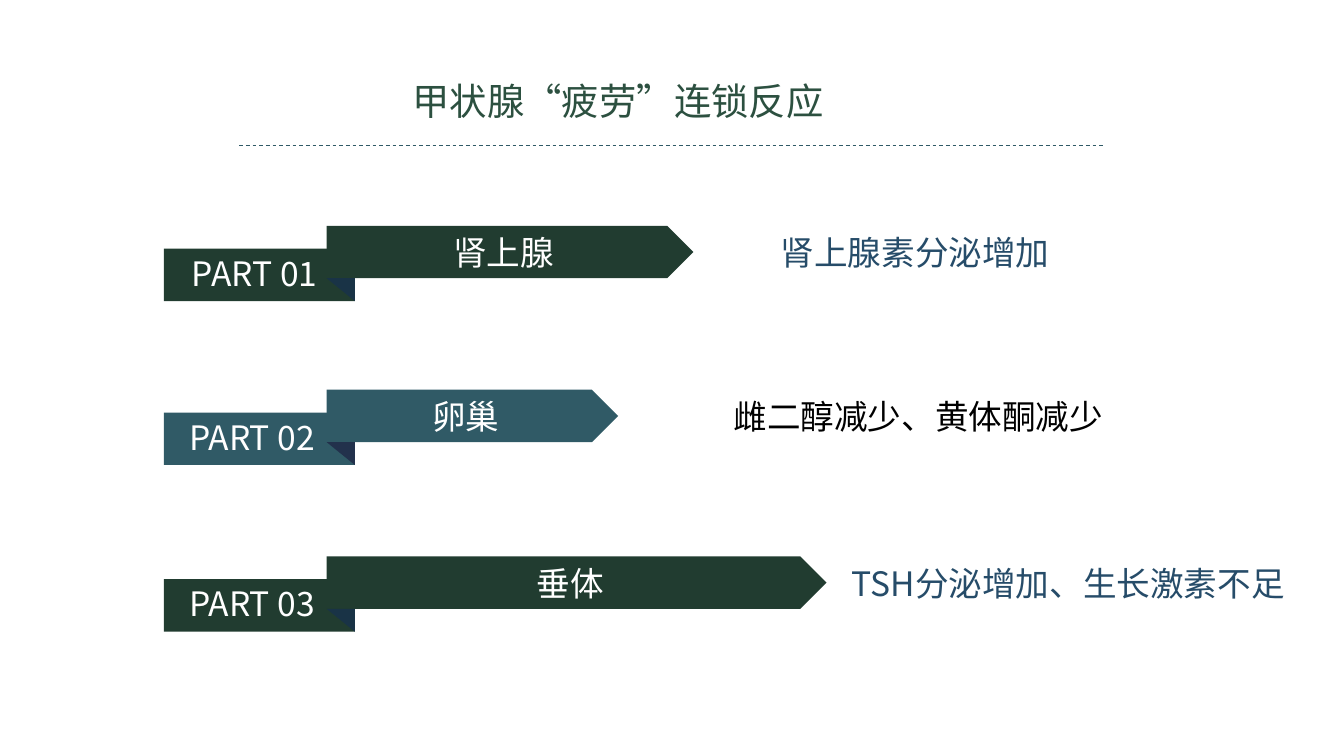
import pptx
import pptx.util
import pptx.dml.color
import pptx.enum.dml
import pptx.enum.shapes
import pptx.enum.text
import pptx.oxml.ns
from dataclasses import dataclass
from lxml import etree

Inches = pptx.util.Inches
SHAPE = pptx.enum.shapes.MSO_SHAPE
ALIGN = pptx.enum.text.PP_ALIGN
qn = pptx.oxml.ns.qn


@dataclass(frozen=True)
class Theme:
    font: str = "Noto Sans CJK SC"
    head: int = 20
    body: int = 18
    title: str = "2C5040"
    green: str = "213C30"
    teal: str = "305A66"
    navy: str = "193346"
    dusk: str = "22314C"
    blue: str = "264C69"
    black: str = "000000"
    white: str = "FFFFFF"


THEME = Theme()


def rgb(code):
    return pptx.dml.color.RGBColor.from_string(code)


def write(frame, text, size, color, align=ALIGN.LEFT):
    para = frame.paragraphs[0]
    para.text = text
    para.alignment = align
    font = para.font
    font.size = pptx.util.Pt(size)
    font.color.rgb = rgb(color)
    font.name = THEME.font
    # East Asian face for the Chinese glyphs
    props = para._p.get_or_add_pPr().find(qn("a:defRPr"))
    etree.SubElement(props, qn("a:ea")).set("typeface", THEME.font)


def add_text(slide, box, text, size, color, wrap=True):
    label = slide.shapes.add_textbox(*map(Inches, box))
    frame = label.text_frame
    frame.word_wrap = wrap
    frame.auto_size = pptx.enum.text.MSO_AUTO_SIZE.SHAPE_TO_FIT_TEXT
    write(frame, text, size, color)


def add_block(slide, kind, box, color):
    block = slide.shapes.add_shape(kind, *map(Inches, box))
    block.shadow.inherit = False
    block.fill.solid()
    block.fill.fore_color.rgb = rgb(color)
    block.line.fill.background()
    return block


def add_rule(slide, left, right, top):
    rule = slide.shapes.add_connector(
        pptx.enum.shapes.MSO_CONNECTOR.STRAIGHT,
        Inches(left), Inches(top), Inches(right), Inches(top))
    rule.line.color.rgb = rgb(THEME.teal)
    rule.line.width = pptx.util.Pt(0.5)
    rule.line.dash_style = pptx.enum.dml.MSO_LINE.DASH
    etree.SubElement(rule._element.spPr, qn("a:effectLst"))


def add_row(slide, top, part, indent, organ, width, fill, fold, effect, color):
    high, drop, left = 0.39, 0.17, 2.43
    # Tab, arrow and the fold between them
    add_block(slide, SHAPE.RECTANGLE, (1.22, top + drop, 1.42, high), fill)
    arrow = add_block(slide, SHAPE.PENTAGON, (left, top, width, high), fill)
    frame = arrow.text_frame
    frame.vertical_anchor = pptx.enum.text.MSO_ANCHOR.MIDDLE
    write(frame, organ, THEME.body, THEME.white, ALIGN.CENTER)
    crease = add_block(slide, SHAPE.RIGHT_TRIANGLE,
                       (left, top + high, 0.21, drop), fold)
    crease.rotation = 180
    # Part number and effect
    add_text(slide, (indent, top + 0.15, 1.17, 0.4), part,
             THEME.body, THEME.white, wrap=False)
    text, start, span = effect
    add_text(slide, (start, top, span, 0.4), text, THEME.body, color)


def main():
    # Widescreen page, 16 by 9
    deck = pptx.Presentation()
    deck.slide_width = Inches(10)
    deck.slide_height = Inches(10 * 9 / 16)
    slide = deck.slides.add_slide(deck.slide_layouts[6])

    # Heading
    add_rule(slide, 1.78, 8.22, 1.08)
    add_text(slide, (2.97, 0.53, 3.27, 0.44), "甲状腺“疲劳”连锁反应",
             THEME.head, THEME.title)

    # Chain of reactions
    rows = [
        (1.68, "PART 01", 1.33, "肾上腺", 2.73, THEME.green, THEME.navy,
         ("肾上腺素分泌增加", 5.71, 2.95), THEME.blue),
        (2.9, "PART 02", 1.31, "卵巢", 2.17, THEME.teal, THEME.dusk,
         ("雌二醇减少、黄体酮减少", 5.36, 3.65), THEME.black),
        (4.14, "PART 03", 1.31, "垂体", 3.72, THEME.green, THEME.navy,
         ("TSH分泌增加、生长激素不足", 6.24, 3.71), THEME.blue),
    ]
    for row in rows:
        add_row(slide, *row)

    deck.save("out.pptx")


if __name__ == "__main__":
    main()
